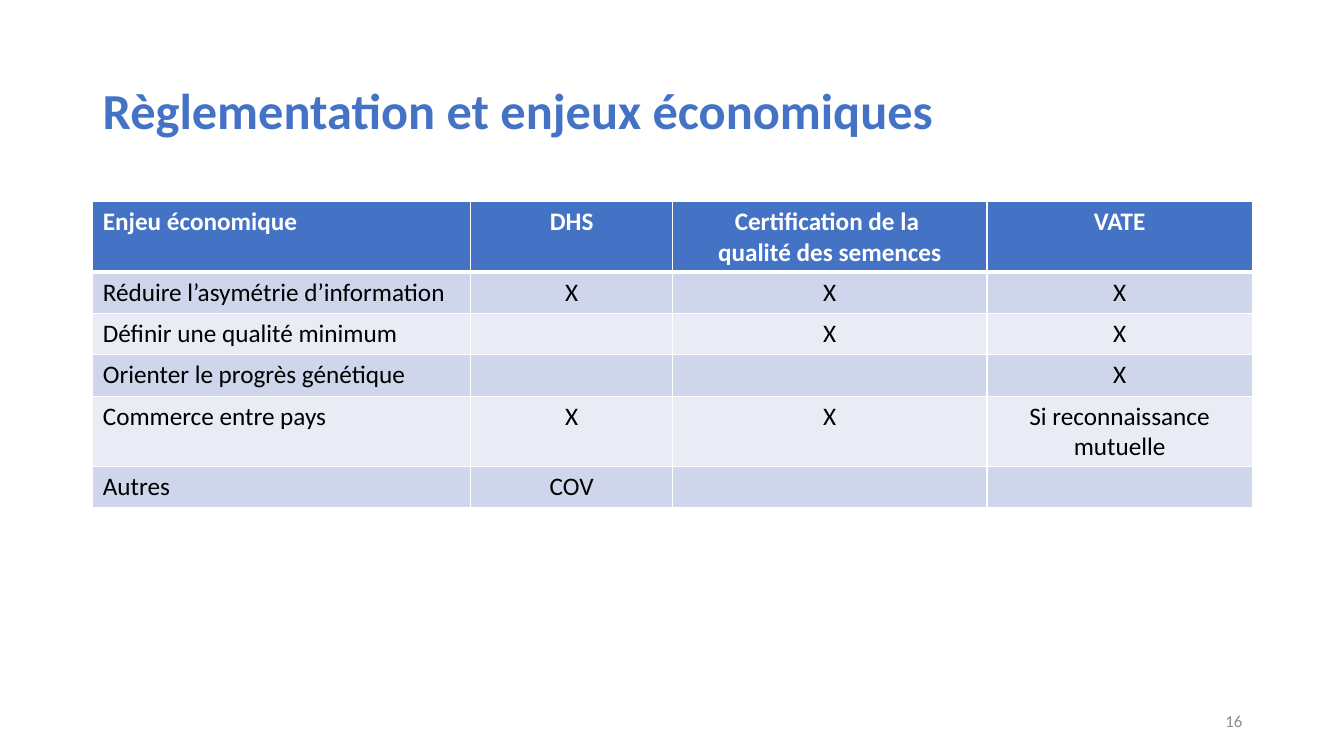
from lxml import etree
from pptx import Presentation
from pptx.dml.color import RGBColor
from pptx.enum.text import MSO_ANCHOR, PP_ALIGN
from pptx.oxml.ns import qn
from pptx.util import Inches, Pt

LEFT, CENTER, RIGHT = PP_ALIGN.LEFT, PP_ALIGN.CENTER, PP_ALIGN.RIGHT
MIDDLE = MSO_ANCHOR.MIDDLE
FONT = "Calibri"
COLORS = {
    "accent": "4472C4",
    "odd_row": "CFD5EA",
    "even_row": "E9EBF5",
    "white": "FFFFFF",
    "black": "000000",
    "grey": "8C8C8C",
}
MARGIN, CONTENT_WIDTH = 0.92, 11.5
COLUMN_WIDTHS = [3.75, 2, 3.12, 2.63]
SINGLE_ROW, DOUBLE_ROW = 0.41, 0.7
ROW_HEIGHTS = [DOUBLE_ROW] + [SINGLE_ROW] * 3 + [DOUBLE_ROW, SINGLE_ROW]
ROWS = [
    ["Enjeu économique", "DHS", "Certification de la \nqualité des semences", "VATE"],
    ["Réduire l’asymétrie d’information", "X", "X", "X"],
    ["Définir une qualité minimum", "", "X", "X"],
    ["Orienter le progrès génétique", "", "", "X"],
    ["Commerce entre pays", "X", "X", "Si reconnaissance mutuelle"],
    ["Autres", "COV", "", ""],
]


def rgb(name):
    return RGBColor.from_string(COLORS[name])


def write_text(paragraph, text, size, color, bold=False, align=LEFT):
    paragraph.alignment = align
    for index, line in enumerate(text.split("\n")):
        if index:
            paragraph.add_line_break()
        run = paragraph.add_run()
        run.text = line
        run.font.name = FONT
        run.font.size = Pt(size)
        run.font.bold = bold
        run.font.color.rgb = rgb(color)


def add_text(slide, box, text, size, color, bold=False, align=LEFT):
    shape = slide.shapes.add_textbox(*map(Inches, box))
    frame = shape.text_frame
    frame.word_wrap = True
    frame.vertical_anchor = MIDDLE
    write_text(frame.paragraphs[0], text, size, color, bold, align)
    return frame.paragraphs[0]


def set_borders(cell, widths):
    properties = cell._tc.get_or_add_tcPr()
    for index, (side, width) in enumerate(widths.items()):
        line = etree.Element(qn(f"a:ln{side}"), w=str(Pt(width)))
        fill = etree.SubElement(line, qn("a:solidFill"))
        etree.SubElement(fill, qn("a:srgbClr"), val=COLORS["white"])
        properties.insert(index, line)


def fill_cell(cell, text, row, column):
    header = row == 0
    band = "odd_row" if row % 2 else "even_row"
    cell.fill.solid()
    cell.fill.fore_color.rgb = rgb("accent" if header else band)
    set_borders(cell, {"L": 1, "R": 1, "T": 3 if row == 1 else 1, "B": 3 if header else 1})
    if text:
        color = "white" if header else "black"
        align = CENTER if column else LEFT
        write_text(cell.text_frame.paragraphs[0], text, 18, color, header, align)


def add_stakes_table(slide):
    box = (MARGIN, 2, CONTENT_WIDTH, sum(ROW_HEIGHTS))
    table = slide.shapes.add_table(len(ROWS), len(COLUMN_WIDTHS), *map(Inches, box)).table
    for column, width in zip(table.columns, COLUMN_WIDTHS):
        column.width = Inches(width)
    for row, height in zip(table.rows, ROW_HEIGHTS):
        row.height = Inches(height)
    for row, texts in enumerate(ROWS):
        for column, text in enumerate(texts):
            fill_cell(table.cell(row, column), text, row, column)


def main():
    presentation = Presentation()
    presentation.slide_width = Inches(13.33)
    presentation.slide_height = Inches(7.5)
    slide = presentation.slides.add_slide(presentation.slide_layouts[6])
    title = add_text(slide, (MARGIN, 0.4, CONTENT_WIDTH, 1.45),
                     "Règlementation et enjeux économiques", 36, "accent", bold=True)
    title.line_spacing = 0.9
    add_stakes_table(slide)
    number_width = 3
    add_text(slide, (MARGIN + CONTENT_WIDTH - number_width, 6.95, number_width, 0.4),
             "16", 12, "grey", align=RIGHT)
    presentation.save("out.pptx")


if __name__ == "__main__":
    main()
